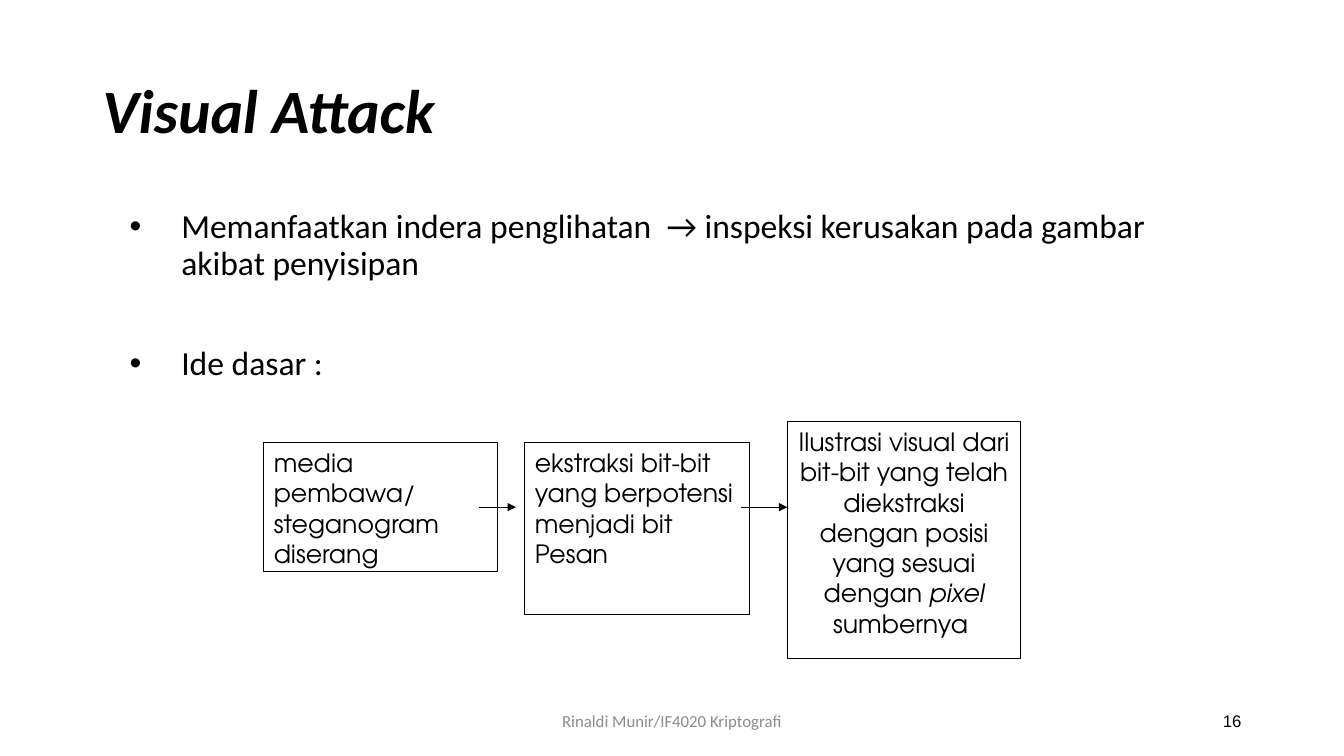
from dataclasses import dataclass

from lxml.etree import SubElement
from pptx import Presentation
from pptx.dml.color import RGBColor
from pptx.enum.shapes import MSO_CONNECTOR, MSO_SHAPE
from pptx.enum.text import MSO_ANCHOR, PP_ALIGN
from pptx.oxml.ns import qn
from pptx.util import Cm, Pt


@dataclass(frozen=True)
class Theme:
    """Colours, fonts and type sizes of the slide."""
    ink: RGBColor = RGBColor(0, 0, 0)
    paper: RGBColor = RGBColor(255, 255, 255)
    muted: RGBColor = RGBColor(0x8C, 0x8C, 0x8C)
    main: str = "Calibri"
    number: str = "Arial"
    diagram: str = "TeX Gyre Adventor"
    title_size: int = 44
    body_size: int = 24
    step_size: int = 18
    footer_size: int = 12
    line_width: float = 0.75


THEME = Theme()


def add_run(p, text, *, size, font=THEME.main, color=THEME.ink, bold=False, italic=False):
    """Append a formatted run to a paragraph."""
    r = p.add_run()
    r.text = text
    r.font.size = Pt(size)
    r.font.name = font
    r.font.color.rgb = color
    r.font.bold = bold
    r.font.italic = italic
    return r


def add_box(s, box, anchor=MSO_ANCHOR.TOP):
    """Add a wrapping text box and return its text frame."""
    tf = s.shapes.add_textbox(*map(Cm, box)).text_frame
    tf.word_wrap = True
    tf.vertical_anchor = anchor
    return tf


def add_title(s, box, text):
    """Place the slide title."""
    p = add_box(s, box, MSO_ANCHOR.MIDDLE).paragraphs[0]
    p.line_spacing = 0.9
    add_run(p, text, size=THEME.title_size, bold=True, italic=True)


def add_bullets(s, box, items, indent=1.3):
    """Place bulleted paragraphs given as (text, space before) pairs."""
    tf = add_box(s, box)
    for i, (text, before) in enumerate(items):
        p = tf.add_paragraph() if i else tf.paragraphs[0]
        p.line_spacing = 0.9
        p.space_before = Pt(before)
        pPr = p._p.get_or_add_pPr()
        pPr.set("marL", str(Cm(indent)))
        pPr.set("indent", str(-Cm(indent)))
        SubElement(pPr, qn("a:buFont"), typeface="Arial")
        SubElement(pPr, qn("a:buChar"), char="•")
        add_run(p, text, size=THEME.body_size)


def add_step(s, box, runs, align):
    """Place one outlined step; runs are (text, italic) pairs."""
    sp = s.shapes.add_shape(MSO_SHAPE.RECTANGLE, *map(Cm, box))
    sp.shadow.inherit = False
    sp.fill.solid()
    sp.fill.fore_color.rgb = THEME.paper
    sp.line.color.rgb = THEME.ink
    sp.line.width = Pt(THEME.line_width)
    tf = sp.text_frame
    tf.word_wrap = True
    tf.vertical_anchor = MSO_ANCHOR.TOP
    p = tf.paragraphs[0]
    p.alignment = align
    for text, italic in runs:
        add_run(p, text, size=THEME.step_size, font=THEME.diagram, italic=italic)


def add_arrow(s, x1, x2, y):
    """Place a horizontal arrow."""
    cxn = s.shapes.add_connector(MSO_CONNECTOR.STRAIGHT, Cm(x1), Cm(y), Cm(x2), Cm(y))
    cxn.line.color.rgb = THEME.ink
    cxn.line.width = Pt(THEME.line_width)
    SubElement(cxn.line._get_or_add_ln(), qn("a:tailEnd"), type="triangle")
    SubElement(cxn._element.spPr, qn("a:effectLst"))


def add_flow(s, box):
    """Place the three steps and the arrows between them."""
    left, top, width, height = box
    wide, drop, axis = 5.89, 0.53, 2.16
    steps = [
        (0, drop, wide, 3.25, PP_ALIGN.LEFT,
         [("media pembawa/ steganogram diserang", False)]),
        (6.58, drop, 5.66, 4.34, PP_ALIGN.LEFT,
         [("ekstraksi bit-bit yang berpotensi menjadi bit Pesan", False)]),
        (width - wide, 0, wide, height, PP_ALIGN.CENTER,
         [("Ilustrasi visual dari bit-bit yang telah diekstraksi dengan posisi "
           "yang sesuai dengan ", False), ("pixel", True), (" sumbernya ", False)]),
    ]
    for x, y, w, h, align, runs in steps:
        add_step(s, (left + x, top + y, w, h), runs, align)
    for x1, x2 in [(5.41, 6.35), (12.02, width - wide)]:
        add_arrow(s, left + x1, left + x2, top + axis)


def add_footer(s, box, text, number):
    """Place the centred footer text and the page number at the right."""
    left, top, width, height = box
    text_w, number_w = 11.43, 7.62
    p = add_box(s, (left + (width - text_w) / 2, top, text_w, height),
                MSO_ANCHOR.MIDDLE).paragraphs[0]
    p.alignment = PP_ALIGN.CENTER
    add_run(p, text, size=THEME.footer_size, color=THEME.muted)
    p = add_box(s, (left + width - number_w, top, number_w, height),
                MSO_ANCHOR.MIDDLE).paragraphs[0]
    p.alignment = PP_ALIGN.RIGHT
    add_run(p, number, size=THEME.footer_size, font=THEME.number)


def main():
    """Build and save the slide."""
    prs = Presentation()
    prs.slide_width, prs.slide_height = Cm(33.87), Cm(19.05)
    s = prs.slides.add_slide(prs.slide_layouts[6])
    add_title(s, (2.33, 1.01, 29.21, 3.68), "Visual Attack")
    add_bullets(s, (3.02, 5.16, 28.25, 11.94), [
        ("Memanfaatkan indera penglihatan  → inspeksi kerusakan pada gambar "
         "akibat penyisipan", 10),
        ("Ide dasar :", 46),
    ])
    add_flow(s, (6.65, 10.62, 19.08, 5.97))
    add_footer(s, (2.33, 17.66, 29.21, 1.01), "Rinaldi Munir/IF4020 Kriptografi", "16")
    prs.save("out.pptx")


if __name__ == "__main__":
    main()
